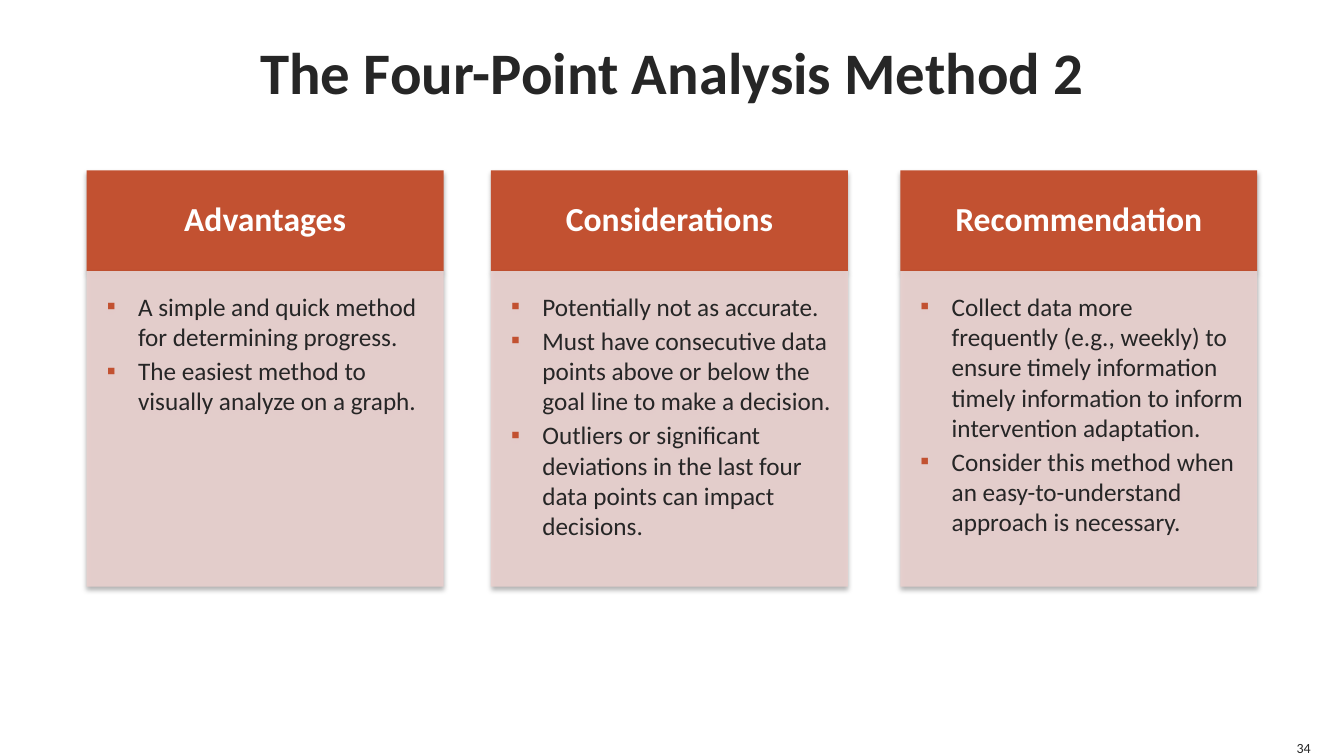
from lxml import etree
from pptx import Presentation
from pptx import util as u
from pptx.dml.color import RGBColor
from pptx.enum import shapes, text
from pptx.oxml.ns import qn

PX = 9144
FONT = "Calibri"
COLORS = {"rust": "C25131", "blush": "E9D0CE", "ink": "262626", "white": "FFFFFF", "shadow": "000000"}
HEADER_HEIGHT = 100
COLUMN_TOP, COLUMN_WIDTH, COLUMN_HEIGHT = 169, 354, 413
COLUMNS = [
    (86, "Advantages", [
        "A simple and quick method for determining progress.",
        "The easiest method to visually analyze on a graph.",
    ]),
    (487, "Considerations", [
        "Potentially not as accurate.",
        "Must have consecutive data points above or below the goal line to make a decision.",
        "Outliers or significant deviations in the last four data points can impact decisions.",
    ]),
    (893, "Recommendation", [
        "Collect data more frequently (e.g., weekly) to ensure timely information "
        "timely information to inform intervention adaptation.",
        "Consider this method when an easy-to-understand approach is necessary.",
    ]),
]


def px(*lengths):
    return [length * PX for length in lengths]


def add_element(parent, tag, **attributes):
    element = etree.SubElement(parent, qn(tag))
    for name, value in attributes.items():
        element.set(name, str(value))
    return element


def format_frame(frame, margins, anchor, wrap=True):
    frame.margin_left, frame.margin_top, frame.margin_right, frame.margin_bottom = px(*margins)
    frame.vertical_anchor = anchor
    frame.word_wrap = wrap


def format_paragraph(paragraph, size, color, alignment, bold=False):
    paragraph.alignment = alignment
    for run in paragraph.runs:
        run.font.name = FONT
        run.font.size = u.Pt(size)
        run.font.bold = bold
        run.font.color.rgb = RGBColor.from_string(COLORS[color])


def add_bullet(paragraph):
    properties = paragraph._p.get_or_add_pPr()
    properties.set("marL", str(31 * PX))
    properties.set("indent", str(-31 * PX))
    bullet_color = add_element(properties, "a:buClr")
    add_element(bullet_color, "a:srgbClr", val=COLORS["rust"])
    add_element(properties, "a:buFont", typeface=FONT)
    add_element(properties, "a:buChar", char="▪")


def add_panel(group, box, color):
    shape = group.shapes.add_shape(shapes.MSO_SHAPE.RECTANGLE, *px(*box))
    shape.fill.solid()
    shape.fill.fore_color.rgb = RGBColor.from_string(COLORS[color])
    shape.line.fill.background()
    shape.shadow.inherit = False
    effects = shape._element.spPr.find(qn("a:effectLst"))
    shadow = add_element(effects, "a:outerShdw", blurRad=u.Pt(3.5), dist=u.Pt(2.2),
                         dir=5400000, algn="ctr", rotWithShape=0)
    shadow_color = add_element(shadow, "a:srgbClr", val=COLORS["shadow"])
    add_element(shadow_color, "a:alpha", val=32000)
    return shape


def add_column(group, box, heading, points):
    left, top, width, height = box
    header = add_panel(group, (left, top, width, HEADER_HEIGHT), "rust")
    format_frame(header.text_frame, (19, 11, 19, 11), text.MSO_ANCHOR.MIDDLE)
    header.text_frame.text = heading
    paragraph = header.text_frame.paragraphs[0]
    paragraph.line_spacing = 0.9
    format_paragraph(paragraph, 24, "white", text.PP_ALIGN.CENTER, bold=True)

    body = add_panel(group, (left, top + HEADER_HEIGHT, width, height - HEADER_HEIGHT), "blush")
    fill_color = body._element.spPr.find(qn("a:solidFill")).find(qn("a:srgbClr"))
    add_element(fill_color, "a:alpha", val=90000)
    format_frame(body.text_frame, (20, 20, 14, 16), text.MSO_ANCHOR.TOP)
    body.text_frame.text = "\n".join(points)
    for paragraph in body.text_frame.paragraphs:
        paragraph.space_after = u.Pt(2.7)
        add_bullet(paragraph)
        format_paragraph(paragraph, 18, "ink", text.PP_ALIGN.LEFT)


def place_title(slide, box):
    title = slide.shapes.title
    title.left, title.top, title.width, title.height = px(*box)
    format_frame(title.text_frame, (0, 0, 0, 0), text.MSO_ANCHOR.MIDDLE)
    title.text_frame.text = "The Four-Point Analysis Method 2"
    format_paragraph(title.text_frame.paragraphs[0], 42, "ink", text.PP_ALIGN.CENTER, bold=True)


def add_page_number(slide, box):
    frame = slide.shapes.add_textbox(*px(*box)).text_frame
    format_frame(frame, (0, 0, 0, 0), text.MSO_ANCHOR.BOTTOM, wrap=False)
    frame.text = "34"
    format_paragraph(frame.paragraphs[0], 10, "ink", text.PP_ALIGN.RIGHT)


def main():
    presentation = Presentation()
    presentation.slide_width, presentation.slide_height = px(1333, 750)
    slide = presentation.slides.add_slide(presentation.slide_layouts[5])
    place_title(slide, (50, 0, 1233, 140))
    group = slide.shapes.add_group_shape()
    for left, heading, points in COLUMNS:
        add_column(group, (left, COLUMN_TOP, COLUMN_WIDTH, COLUMN_HEIGHT), heading, points)
    add_page_number(slide, (1283, 733, 17, 17))
    presentation.save("out.pptx")


if __name__ == "__main__":
    main()
